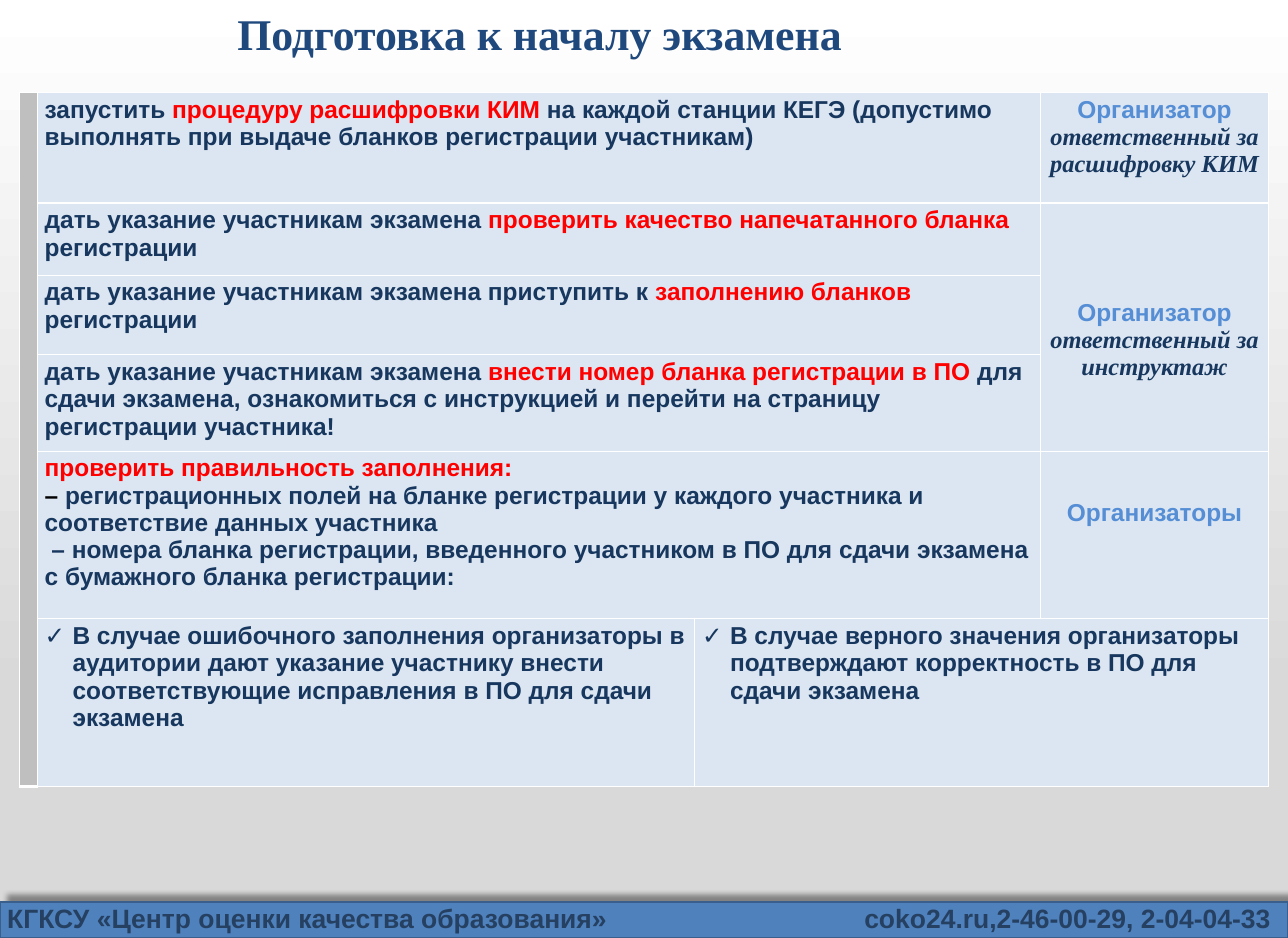
from lxml import etree
from pptx import Presentation
from pptx import util as u
from pptx.dml.color import RGBColor
from pptx.enum import shapes, text
from pptx.oxml.ns import qn

NAVY = RGBColor(0x17, 0x37, 0x5E)
RED = RGBColor(0xFF, 0, 0)
SKY = RGBColor(0x55, 0x8E, 0xD5)
BLACK = RGBColor(0, 0, 0)
WHITE = RGBColor(0xFF, 0xFF, 0xFF)
GREY = RGBColor(0xBF, 0xBF, 0xBF)
PALE = RGBColor(0xDC, 0xE6, 0xF2)
SHADE = RGBColor(0xD9, 0xD9, 0xD9)
TITLE_BLUE = RGBColor(0x1F, 0x49, 0x7D)
BAR_BLUE = RGBColor(0x4F, 0x81, 0xBD)
BAR_EDGE = RGBColor(0x3A, 0x5F, 0x8C)
BAR_TEXT = RGBColor(0x25, 0x40, 0x61)
SERIF = "Times New Roman"
CENTER = text.PP_ALIGN.CENTER
MIDDLE = text.MSO_ANCHOR.MIDDLE

COLUMNS = [0.23, 8.97, 4.71, 3.12]
ROWS = [1.51, 0.98, 1.09, 1.31, 2.29, 2.29]
MERGES = [((0, 0), (5, 0)), ((1, 3), (3, 3)), ((5, 2), (5, 3))] + [
    ((row, 1), (row, 2)) for row in range(5)]

STEPS = [
    [[("запустить ", NAVY), ("процедуру расшифровки КИМ ", RED),
      ("на каждой станции КЕГЭ (допустимо выполнять при выдаче бланков регистрации участникам)", NAVY)]],
    [[("дать указание участникам экзамена ", NAVY),
      ("проверить качество напечатанного бланка ", RED), ("регистрации", NAVY)]],
    [[("дать указание участникам экзамена приступить к ", NAVY),
      ("заполнению бланков ", RED), ("регистрации", NAVY)]],
    [[("дать указание участникам экзамена ", NAVY),
      ("внести номер бланка регистрации в ПО ", RED),
      ("для сдачи экзамена, ознакомиться с инструкцией и перейти на страницу регистрации участника!", NAVY)]],
    [[("проверить правильность заполнения:", RED)],
     [("– ", BLACK),
      ("регистрационных полей на бланке регистрации у каждого участника и соответствие данных участника", NAVY)],
     [(" – номера бланка регистрации, введенного участником в ПО для сдачи экзамена с бумажного бланка регистрации:", NAVY)]],
]
OUTCOMES = [
    "В случае ошибочного заполнения организаторы в аудитории дают указание участнику внести соответствующие исправления в ПО для сдачи экзамена",
    "В случае верного значения организаторы подтверждают корректность в ПО для сдачи экзамена",
]


def write(frame, paragraphs, size=24, font="Arial", align=None, bullet=None, tab=None):
    frame.word_wrap = True
    for index, runs in enumerate(paragraphs):
        line = frame.paragraphs[0] if index == 0 else frame.add_paragraph()
        line.alignment = align
        properties = line._p.get_or_add_pPr()
        if bullet:
            indent = u.Inches(0.38)
            properties.set("marL", str(indent))
            properties.set("indent", str(-indent))
            etree.SubElement(properties, qn("a:buFont"), typeface="Arial")
            etree.SubElement(properties, qn("a:buChar"), char=bullet)
        if tab:
            stops = etree.SubElement(properties, qn("a:tabLst"))
            etree.SubElement(stops, qn("a:tab"), pos=str(u.Inches(tab)), algn="r")
        line.font.size = u.Pt(size)
        for wording, color, *role_font in runs:
            run = line.add_run()
            run.text = wording
            run.font.size = u.Pt(size)
            run.font.name = role_font[0] if role_font else font
            run.font.bold = True
            run.font.italic = bool(role_font)
            run.font.color.rgb = color


def style_cell(cell, fill, bottom):
    cell.fill.solid()
    cell.fill.fore_color.rgb = fill
    properties = cell._tc.get_or_add_tcPr()
    for position, side in enumerate("LRTB"):
        width = bottom if side == "B" else 1
        edge = etree.Element(qn(f"a:ln{side}"), w=str(u.Pt(width)))
        paint = etree.SubElement(edge, qn("a:solidFill"))
        etree.SubElement(paint, qn("a:srgbClr"), val=str(WHITE))
        properties.insert(position, edge)


def add_background(slide):
    fill = slide.background.fill
    fill.gradient()
    fill.gradient_angle = 270
    for stop, (position, color) in zip(fill.gradient_stops, [(0, WHITE), (0.74, SHADE)]):
        stop.position = position
        stop.color.rgb = color


def add_title(slide, left, top, width, height):
    title = slide.shapes.add_textbox(*map(u.Inches, (left, top, width, height)))
    title.text_frame.vertical_anchor = MIDDLE
    write(title.text_frame, [[("Подготовка к началу экзамена", TITLE_BLUE)]],
          size=43, font=SERIF, align=CENTER)


def add_duties(slide, left, top):
    box = (left, top, sum(COLUMNS), sum(ROWS))
    duties = slide.shapes.add_table(len(ROWS), len(COLUMNS), *map(u.Inches, box)).table
    duties.first_row = duties.horz_banding = False
    for column, width in zip(duties.columns, COLUMNS):
        column.width = u.Inches(width)
    for row, height in zip(duties.rows, ROWS):
        row.height = u.Inches(height)
    for row in range(len(ROWS)):
        for column in range(len(COLUMNS)):
            style_cell(duties.cell(row, column), PALE if column else GREY,
                       1 if row and column else 3)
    for first, last in MERGES:
        duties.cell(*first).merge(duties.cell(*last))

    for row, step in enumerate(STEPS):
        write(duties.cell(row, 1).text_frame, step)
    for column, outcome in enumerate(OUTCOMES, 1):
        write(duties.cell(5, column).text_frame, [[(outcome, NAVY)]], bullet="✓")

    decoder, instructor, organizers = (duties.cell(row, 3) for row in (0, 1, 4))
    for cell, duty in [(decoder, "ответственный за расшифровку КИМ"),
                       (instructor, "ответственный за инструктаж")]:
        write(cell.text_frame, [[("Организатор ", SKY), (duty, NAVY, SERIF)]], align=CENTER)
    write(organizers.text_frame, [[("Организаторы", SKY)]], align=CENTER)
    instructor.vertical_anchor = organizers.vertical_anchor = MIDDLE
    instructor.margin_top = u.Inches(0.4)
    organizers.margin_bottom = u.Inches(0.65)


def add_footer(slide, left, top, width, height):
    bar = slide.shapes.add_shape(shapes.MSO_SHAPE.RECTANGLE,
                                 *map(u.Inches, (left, top, width, height)))
    bar.fill.solid()
    bar.fill.fore_color.rgb = BAR_BLUE
    bar.line.color.rgb = BAR_EDGE
    bar.line.width = u.Pt(2)
    bar.shadow.inherit = False
    effects = bar._element.spPr.find(qn("a:effectLst"))
    shadow = etree.SubElement(effects, qn("a:outerShdw"), blurRad=str(u.Pt(4)),
                              dist=str(u.Pt(10)), dir=str(315 * 60000),
                              algn="bl", rotWithShape="0")
    shade = etree.SubElement(shadow, qn("a:srgbClr"), val=str(BLACK))
    etree.SubElement(shade, qn("a:alpha"), val="40000")

    contacts = slide.shapes.add_textbox(
        *map(u.Inches, (left, top - 0.05, width - 0.1, height + 0.05)))
    write(contacts.text_frame,
          [[("КГКСУ «Центр оценки качества образования»\tcoko24.ru,2-46-00-29, 2-04-04-33", BAR_TEXT)]],
          size=26, tab=width - 0.33)


def main():
    deck = Presentation()
    deck.slide_width, deck.slide_height = u.Inches(17.57), u.Inches(12.79)
    slide = deck.slides.add_slide(deck.slide_layouts[6])
    add_background(slide)
    add_footer(slide, 0, 12.3, 17.57, 0.49)
    add_title(slide, 0.65, -0.06, 13.42, 1.02)
    add_duties(slide, 0.27, 1.26)
    deck.save("out.pptx")


if __name__ == "__main__":
    main()
